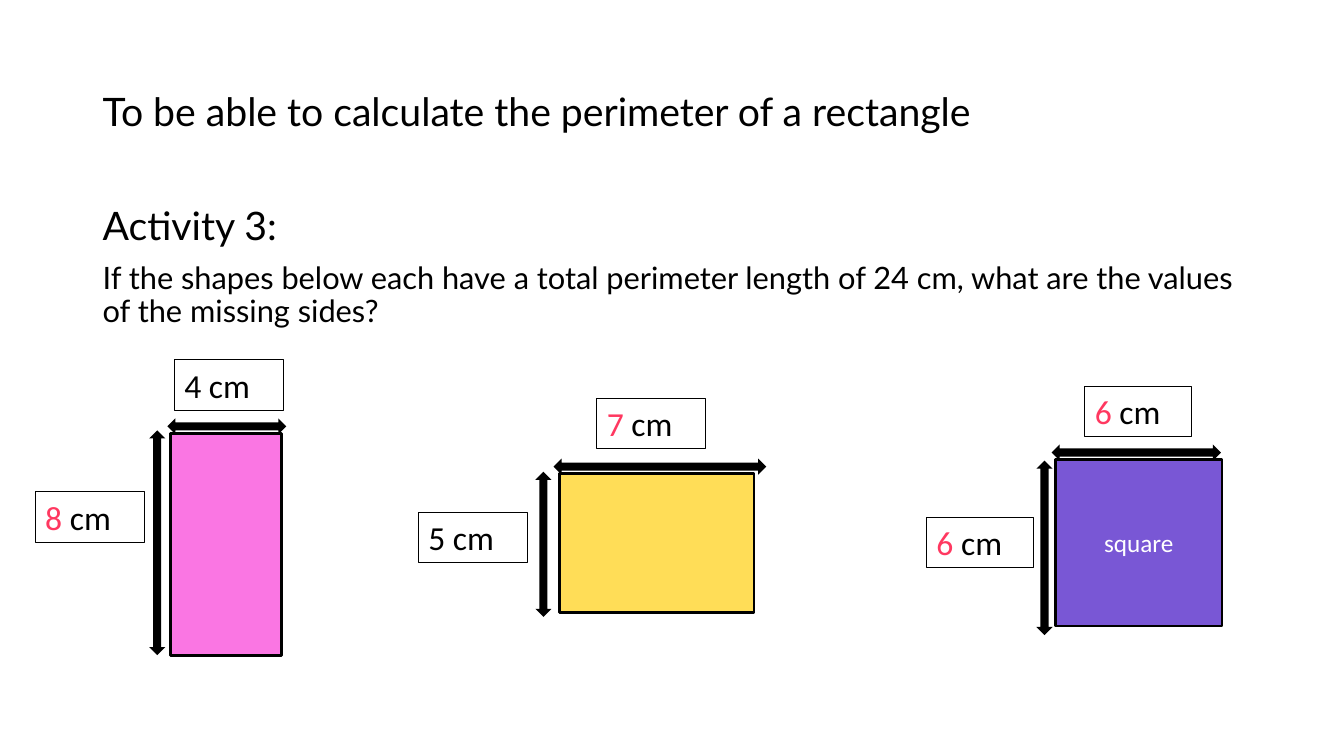
from pptx import Presentation
from pptx.dml.color import RGBColor
from pptx.enum.shapes import MSO_SHAPE
from pptx.enum.text import MSO_ANCHOR, PP_ALIGN
from pptx.util import Inches, Pt

BLACK = RGBColor(0x00, 0x00, 0x00)
WHITE = RGBColor(0xFF, 0xFF, 0xFF)
RED = RGBColor(0xFF, 0x38, 0x60)
PINK = RGBColor(0xFA, 0x76, 0xE3)
YELLOW = RGBColor(0xFF, 0xDD, 0x57)
PURPLE = RGBColor(0x79, 0x57, 0xD5)

# Content: text boxes as (box, anchor, [(text, size)])
TEXTS = [
    ((0.92, 0.4, 9.6, 1.45), MSO_ANCHOR.MIDDLE,
     [("To be able to calculate the perimeter of a rectangle", 28)]),
    ((0.92, 2, 11.5, 4.76), MSO_ANCHOR.TOP,
     [("Activity 3:", 28),
      ("If the shapes below each have a total perimeter length of 24 cm, "
       "what are the values of the missing sides?", 22)]),
]

# Labels are (left, top, answer in red, rest); arrows are (start, length)
FIGURES = [
    dict(box=(1.69, 4.3, 1.1, 2.2), color=PINK, text="",
         across=(1.66, 1.18), down=(4.27, 2.23), down_left=1.48, label_w=1.08,
         labels=[(1.73, 3.57, "", "4 cm"), (0.35, 4.88, "8", " cm")]),
    dict(box=(5.55, 4.7, 1.93, 1.38), color=YELLOW, text="",
         across=(5.49, 2.11), down=(4.68, 1.44), down_left=5.31, label_w=1.08,
         labels=[(5.92, 3.95, "7", " cm"), (4.15, 5.08, "", "5 cm")]),
    dict(box=(10.47, 4.56, 1.65, 1.65), color=PURPLE, text="square",
         across=(10.43, 1.68), down=(4.57, 1.73), down_left=10.28, label_w=1.06,
         labels=[(10.76, 3.83, "6", " cm"), (9.19, 5.13, "6", " cm")]),
]
ARROW = 0.16      # arrow thickness
ARROW_RISE = 0.15  # top arrow above its rectangle
LABEL_H = 0.5

prs = Presentation()
prs.slide_width, prs.slide_height = Inches(13.33), Inches(7.5)
s = prs.slides.add_slide(prs.slide_layouts[6])


def add_run(p, text, size, color, name="Calibri"):
    r = p.add_run()
    r.text = text
    r.font.color.rgb = color
    for key, value in dict(size=Pt(size), name=name).items():
        setattr(r.font, key, value)


def add_shape(kind, box, fill, line_width=0):
    sp = s.shapes.add_shape(kind, *map(Inches, box))
    sp.shadow.inherit = False
    sp.fill.solid()
    sp.fill.fore_color.rgb = fill
    if line_width:
        sp.line.color.rgb = BLACK
        sp.line.width = Pt(line_width)
    else:
        sp.line.fill.background()
    return sp


# Title and task
for box, anchor, lines in TEXTS:
    tf = s.shapes.add_textbox(*map(Inches, box)).text_frame
    tf.word_wrap = True
    tf.vertical_anchor = anchor
    for i, (text, size) in enumerate(lines):
        p = tf.add_paragraph() if i else tf.paragraphs[0]
        p.line_spacing = 0.9
        if i:
            p.space_before = Pt(10)
        add_run(p, text, size, BLACK, "Lato")

# Rectangles with their arrows and labels
for fig in FIGURES:
    sp = add_shape(MSO_SHAPE.RECTANGLE, fig["box"], fig["color"], 2)
    if fig["text"]:
        p = sp.text_frame.paragraphs[0]
        p.alignment = PP_ALIGN.CENTER
        add_run(p, fig["text"], 18, WHITE)

    left, width = fig["across"]
    add_shape(MSO_SHAPE.LEFT_RIGHT_ARROW,
              (left, fig["box"][1] - ARROW_RISE, width, ARROW), BLACK)
    top, height = fig["down"]
    add_shape(MSO_SHAPE.UP_DOWN_ARROW,
              (fig["down_left"], top, ARROW, height), BLACK)

    for left, top, answer, rest in fig["labels"]:
        sp = add_shape(MSO_SHAPE.RECTANGLE,
                       (left, top, fig["label_w"], LABEL_H), WHITE, 0.75)
        tf = sp.text_frame
        tf.vertical_anchor = MSO_ANCHOR.TOP
        p = tf.paragraphs[0]
        p.alignment = PP_ALIGN.LEFT
        if answer:
            add_run(p, answer, 24, RED)
        add_run(p, rest, 24, BLACK)

prs.save("out.pptx")
